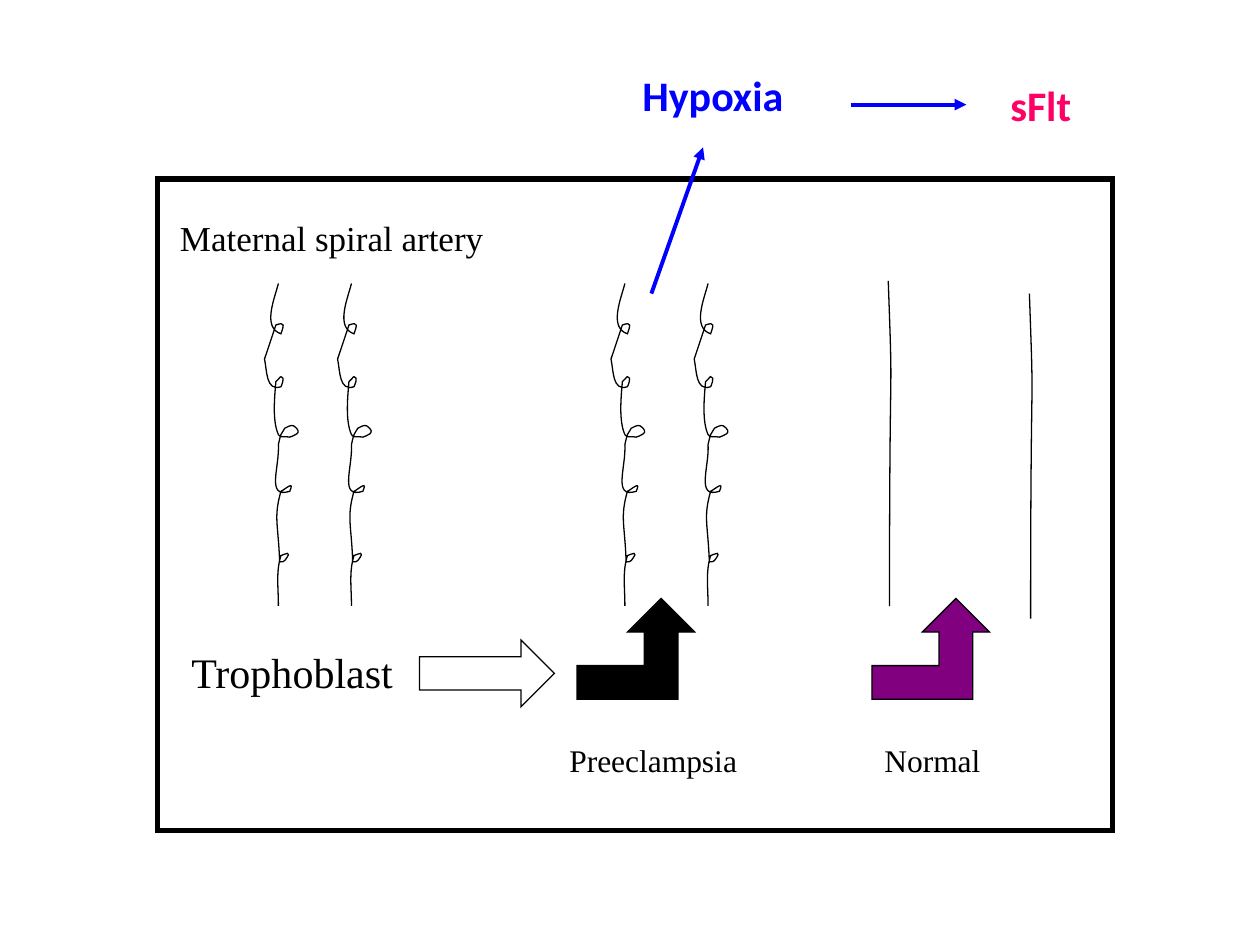
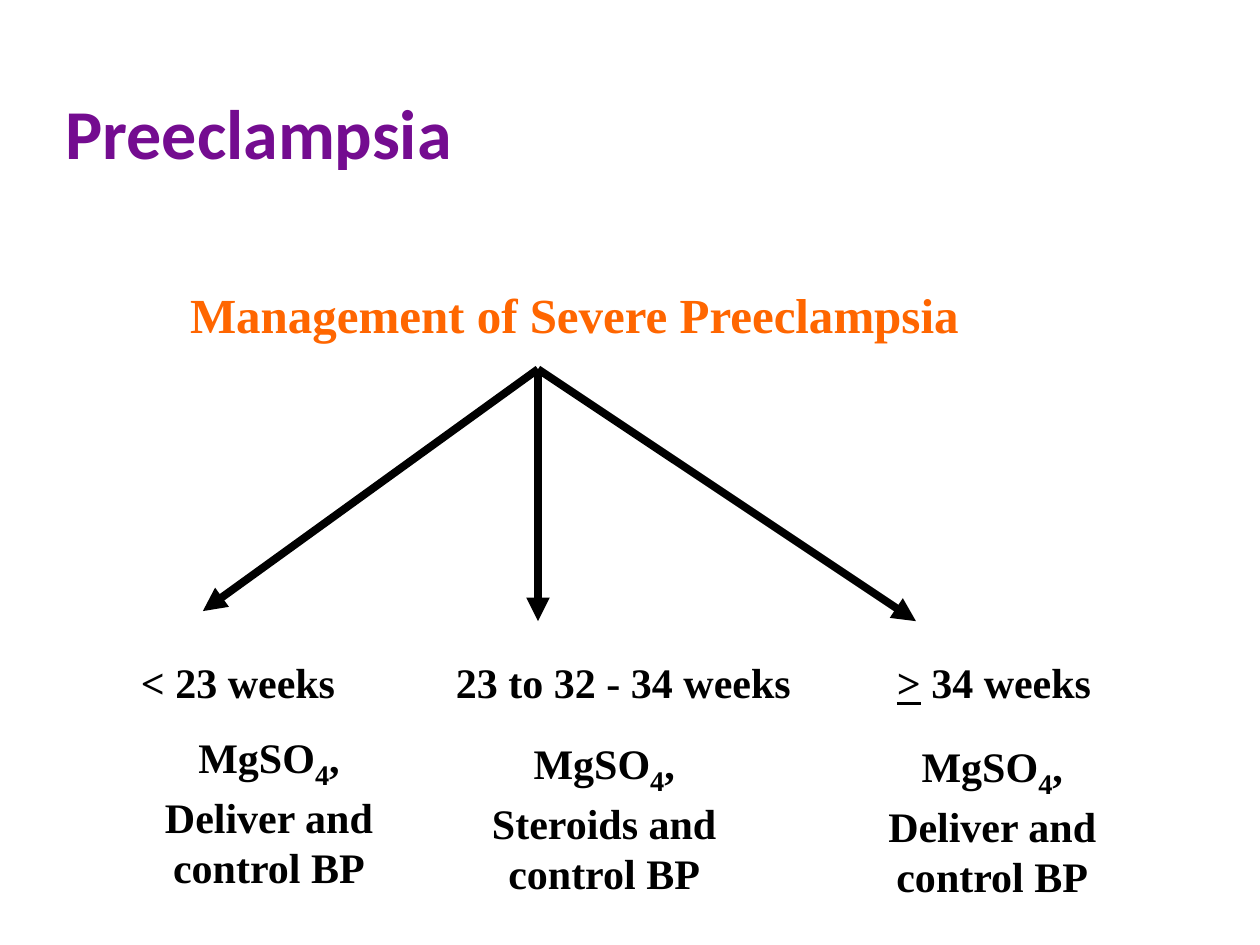
"""Build two slides on preeclampsia: spiral artery remodelling and severe-disease management."""
from dataclasses import dataclass

from lxml import etree
from pptx import Presentation
from pptx.dml.color import RGBColor as RGB
from pptx.enum.shapes import MSO_CONNECTOR as CONN, MSO_SHAPE as SHAPE
from pptx.enum.text import MSO_ANCHOR as ANCHOR, PP_ALIGN as ALIGN
from pptx.oxml.ns import qn
from pptx.util import Inches, Pt


@dataclass(frozen=True)
class Theme:
    serif: str = "Times New Roman"
    sans: str = "Calibri"
    black: str = "000000"
    white: str = "FFFFFF"
    blue: str = "0000FF"
    pink: str = "FF0066"
    purple: str = "800080"
    title_purple: str = "740C90"
    orange: str = "FF6600"
    title_size: int = 40
    heading_size: int = 28
    body_size: int = 24
    label_size: int = 20
    caption_size: int = 18
    hairline: float = 0.75
    frame_line: float = 3
    link_line: float = 2.25
    branch_line: float = 4.5


T = Theme()

COIL = [
    (0.13, 0),
    (0.1, 0.12), (0, 0.35), (0.15, 0.4),
    (0.17, 0.34), (0.19, 0.3), (0.11, 0.33),
    (0.08, 0.42), (0.05, 0.51), (0.02, 0.6),
    (0.04, 0.69), (0.03, 0.86), (0.15, 0.82),
    (0.15, 0.82), (0.19, 0.74), (0.15, 0.74),
    (0.14, 0.74), (0.13, 0.77), (0.11, 0.78),
    (0.1, 0.9), (0.08, 1.09), (0.13, 1.2),
    (0.14, 1.23), (0.19, 1.21), (0.22, 1.22),
    (0.24, 1.21), (0.34, 1.19), (0.25, 1.13),
    (0.23, 1.12), (0.2, 1.14), (0.18, 1.15),
    (0.17, 1.17), (0.16, 1.18), (0.15, 1.2),
    (0.14, 1.23), (0.13, 1.28), (0.13, 1.28),
    (0.14, 1.46), (0.03, 1.71), (0.22, 1.65),
    (0.26, 1.56), (0.19, 1.63), (0.15, 1.65),
    (0.09, 1.86), (0.13, 1.91), (0.14, 2.21),
    (0.16, 2.21), (0.17, 2.21), (0.18, 2.2),
    (0.25, 2.11), (0.18, 2.15), (0.15, 2.16),
    (0.11, 2.29), (0.13, 2.41), (0.13, 2.56),
]
WALL = [(0, 0), (0.04, 1.13), (0.01, 0.27), (0.01, 2.58)]
BENT_ARROW = [(2.5, 0), (1.5, 1), (2, 1), (2, 2), (0, 2), (0, 3), (3, 3), (3, 1), (3.5, 1)]
BENT_UNIT = 0.8 / 3


def add_run(p, text, font=T.serif, size=T.body_size, color=T.black,
            bold=False, underline=False, baseline=0):
    """Append a formatted run to a paragraph."""
    r = p.add_run()
    r.text = text
    r.font.name = font
    r.font.size = Pt(size)
    r.font.color.rgb = RGB.from_string(color)
    r.font.bold = bold
    if underline:
        r.font.underline = True
    if baseline:
        r.font._element.set("baseline", str(baseline * 1000))


class Deck:
    """Hold the presentation, its theme and the current slide."""

    def __init__(self, theme):
        self.theme = theme
        self.prs = Presentation()
        self.prs.slide_width, self.prs.slide_height = Inches(10), Inches(7.5)
        self.s = None

    def new_slide(self, title=None):
        """Start a slide, with a title if one is given."""
        t = self.theme
        self.s = self.prs.slides.add_slide(self.prs.slide_layouts[5 if title else 6])
        if title:
            sp = self.s.shapes.title
            sp.left, sp.top, sp.width, sp.height = map(Inches, (0.42, 0.42, 6.67, 1.25))
            sp.text_frame.vertical_anchor = ANCHOR.MIDDLE
            p = sp.text_frame.paragraphs[0]
            p.alignment = ALIGN.LEFT
            add_run(p, title, font=t.sans, size=t.title_size, color=t.title_purple, bold=True)

    def text(self, x, y, w, h, *runs, align=ALIGN.LEFT, wrap=True, parent=None, **style):
        """Add a text box of runs, each a string or a (string, overrides) pair."""
        shapes = (parent or self.s).shapes
        tf = shapes.add_textbox(*map(Inches, (x, y, w, h))).text_frame
        tf.word_wrap = wrap
        self.fill_paragraph(tf.paragraphs[0], *runs, align=align, **style)
        return tf

    def fill_paragraph(self, p, *runs, align=ALIGN.LEFT, **style):
        """Align a paragraph and add its runs."""
        p.alignment = align
        for item in runs:
            content, extra = (item, {}) if isinstance(item, str) else item
            add_run(p, content, **{**style, **extra})

    def outline(self, sp, width, fill=None):
        """Give a shape a mitred black line and a solid or empty fill."""
        sp.shadow.inherit = False
        if fill:
            sp.fill.solid()
            sp.fill.fore_color.rgb = RGB.from_string(fill)
        else:
            sp.fill.background()
        sp.line.color.rgb = RGB.from_string(self.theme.black)
        sp.line.width = Pt(width)
        etree.SubElement(sp.line._get_or_add_ln(), qn("a:miter"), lim="800000")

    def shape(self, kind, x, y, w, h, fill, width=T.hairline):
        """Add a preset shape."""
        sp = self.s.shapes.add_shape(kind, *map(Inches, (x, y, w, h)))
        self.outline(sp, width, fill)

    def freeform(self, x, y, points, unit=1, fill=None):
        """Draw a filled polygon, or an open chain of cubic curves if there is no fill."""
        first, *rest = [(Inches(x + dx * unit), Inches(y + dy * unit)) for dx, dy in points]
        builder = self.s.shapes.build_freeform(*first)
        builder.add_line_segments(rest, close=bool(fill))
        sp = builder.convert_to_shape()
        if not fill:
            lines = list(sp._element.iter(qn("a:lnTo")))
            for i in range(0, len(lines), 3):
                lines[i].tag = qn("a:cubicBezTo")
                for line in lines[i + 1:i + 3]:
                    lines[i].append(line[0])
                    line.getparent().remove(line)
        self.outline(sp, self.theme.hairline, fill)

    def arrow(self, start, end, color, width, parent=None):
        """Add a straight arrow."""
        shapes = (parent or self.s).shapes
        c = shapes.add_connector(CONN.STRAIGHT, *map(Inches, (*start, *end)))
        c.line.color.rgb = RGB.from_string(color)
        c.line.width = Pt(width)
        etree.SubElement(c.line._get_or_add_ln(), qn("a:tailEnd"), type="triangle")
        etree.SubElement(c._element.spPr, qn("a:effectLst"))


def artery_slide(deck):
    """Compare spiral arteries in preeclampsia and normal pregnancy."""
    t = deck.theme
    deck.new_slide()
    deck.shape(SHAPE.RECTANGLE, 1.25, 1.42, 7.58, 5.17, t.white, t.frame_line)
    for x in (2.08, 2.66, 4.83, 5.49):
        deck.freeform(x, 2.25, COIL)
    for x, y in ((7.05, 2.23), (8.17, 2.33)):
        deck.freeform(x, y, WALL)
    for x, fill in ((4.58, t.black), (6.92, t.purple)):
        deck.freeform(x, 4.75, BENT_ARROW, BENT_UNIT, fill)
    deck.text(1.33, 1.67, 3.17, 0.43, "Maternal spiral artery", size=t.label_size)
    deck.text(1.42, 5.08, 1.81, 0.5, "Trophoblast", wrap=False)
    deck.shape(SHAPE.RIGHT_ARROW, 3.33, 5.08, 1.07, 0.53, t.white)
    deck.text(4.42, 5.83, 2, 0.4, "Preeclampsia", size=t.caption_size)
    deck.text(6.92, 5.83, 1.08, 0.4, "Normal", size=t.caption_size)
    deck.arrow((5.17, 2.33), (5.58, 1.17), t.blue, t.link_line)
    deck.text(5, 0.5, 1.75, 0.5, "Hypoxia", font=t.sans, color=t.blue, bold=True)
    deck.arrow((6.75, 0.83), (7.67, 0.83), t.blue, t.link_line)
    deck.text(7.92, 0.58, 1, 0.5, "sFlt", font=t.sans, color=t.pink, bold=True)


def management_slide(deck):
    """Show management of severe preeclampsia by gestational age."""
    t = deck.theme
    deck.new_slide("Preeclampsia")
    tree = deck.s.shapes.add_group_shape()
    tf = deck.text(1.02, 2.21, 7.74, 4.23, "Management of Severe Preeclampsia", wrap=False,
                   parent=tree, size=t.heading_size, color=t.orange, bold=True)
    tf.paragraphs[0]._p.get_or_add_pPr().set("marL", str(Inches(0.39)))
    ages = tf.add_paragraph()
    ages.space_before = Pt(179)
    tabs = etree.SubElement(ages._p.get_or_add_pPr(), qn("a:tabLst"))
    for stop in (2.5, 6):
        etree.SubElement(tabs, qn("a:tab"), pos=str(Inches(stop)), algn="l")
    deck.fill_paragraph(ages, "< 23 weeks\t23 to 32 - 34 weeks\t",
                        (">", {"underline": True}), " 34 weeks", bold=True)
    for tip in ((4.27, 4.93), (7.27, 4.93), (1.61, 4.85)):
        deck.arrow((4.27, 2.93), tip, t.black, t.branch_line, parent=tree)
    subscript = ("4", {"size": t.heading_size, "baseline": -25})
    for x, y, action in ((3.67, 5.75, "Steroids"), (6.75, 5.77, "Deliver"),
                         (1.01, 5.7, "Deliver")):
        deck.text(x, y, 2.25, 1.3, "MgSO", subscript, f", {action} and control BP",
                  align=ALIGN.CENTER, bold=True)


def main():
    """Build and save the deck."""
    deck = Deck(T)
    artery_slide(deck)
    management_slide(deck)
    deck.prs.save("out.pptx")


if __name__ == "__main__":
    main()
